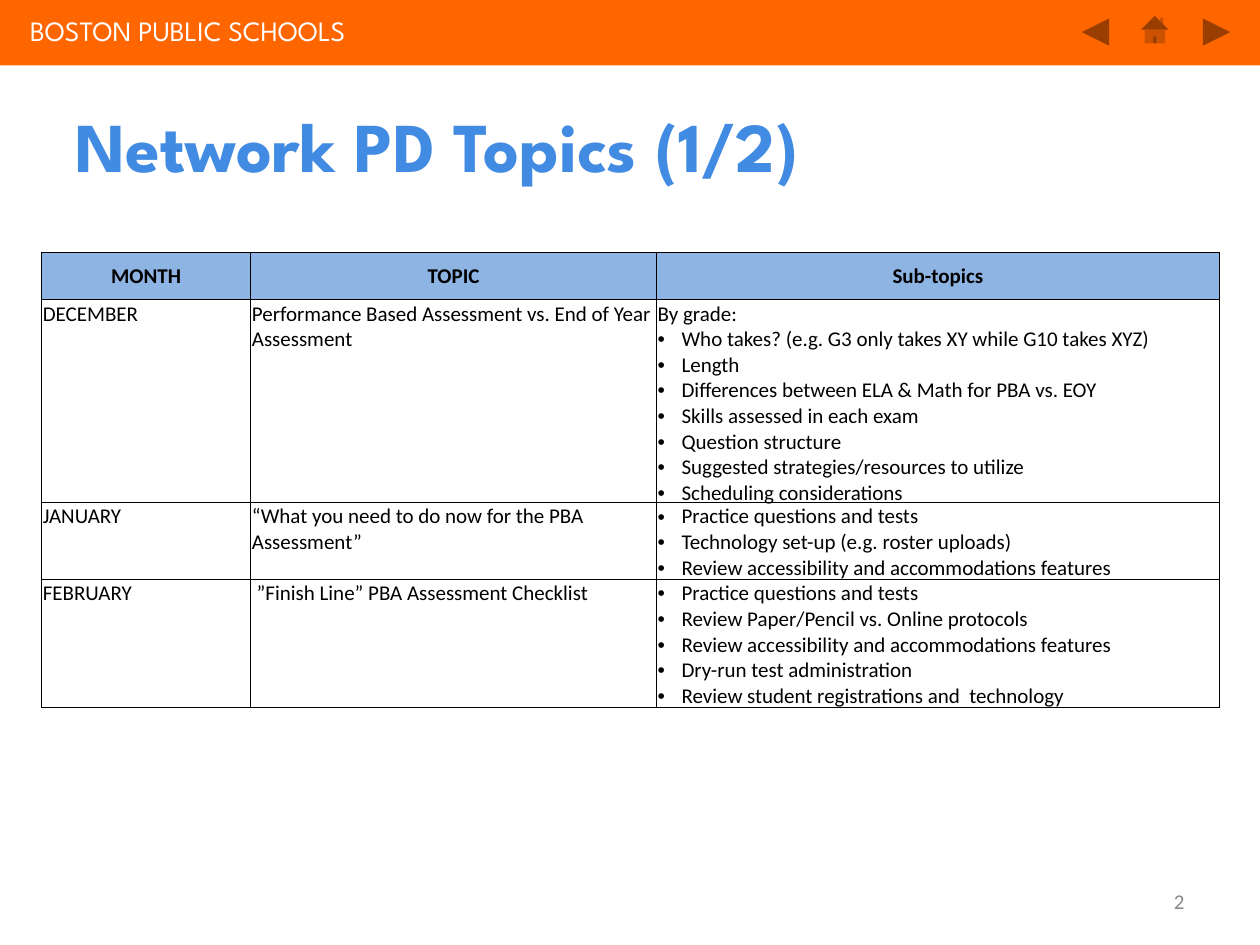
from lxml import etree
from pptx import Presentation
from pptx.dml.color import RGBColor
from pptx.enum.shapes import MSO_SHAPE
from pptx.enum.text import MSO_ANCHOR, PP_ALIGN
from pptx.oxml.ns import qn
from pptx.util import Emu, Inches, Pt

RECT = MSO_SHAPE.RECTANGLE
BACK = MSO_SHAPE.ACTION_BUTTON_BACK_OR_PREVIOUS
HOME = MSO_SHAPE.ACTION_BUTTON_HOME
NEXT = MSO_SHAPE.ACTION_BUTTON_FORWARD_OR_NEXT
LEFT, CENTER, RIGHT = PP_ALIGN.LEFT, PP_ALIGN.CENTER, PP_ALIGN.RIGHT
TOP, MIDDLE = MSO_ANCHOR.TOP, MSO_ANCHOR.MIDDLE

COLORS = {"banner": "FF6600", "white": "FFFFFF", "title": "428BE3",
          "header": "8DB4E2", "text": "000000", "number": "898989"}
HEADING_FONT, BODY_FONT = "League Spartan", "Calibri"
SLIDE_COLS, SLIDE_ROWS = 100, 75
BULLET = "•"
INDENT = Inches(0.19)

TABLE_COLS = (16.6, 32.2, 44.7)
ROW_HEIGHT = 3.8
HEADERS = ("MONTH", "TOPIC", "Sub-topics")
TOPICS = (
    ("DECEMBER",
     "Performance Based Assessment vs. End of Year Assessment",
     ("By grade:",
      "• Who takes? (e.g. G3 only takes XY while G10 takes XYZ)",
      "• Length",
      "• Differences between ELA & Math for PBA vs. EOY",
      "• Skills assessed in each exam",
      "• Question structure",
      "• Suggested strategies/resources to utilize",
      "• Scheduling considerations")),
    ("JANUARY",
     "“What you need to do now for the PBA Assessment”",
     ("• Practice questions and tests",
      "• Technology set-up (e.g. roster uploads)",
      "• Review accessibility and accommodations features")),
    ("FEBRUARY",
     " ”Finish Line” PBA Assessment Checklist",
     ("• Practice questions and tests",
      "• Review Paper/Pencil vs. Online protocols",
      "• Review accessibility and accommodations features",
      "• Dry-run test administration",
      "• Review student registrations and  technology")),
)


def grid(*cells):
    """Turn numbers of grid cells, a tenth of an inch each, into lengths."""
    return [Emu(round(c * Inches(10) / SLIDE_COLS)) for c in cells]


def color(name):
    """Look up a named colour."""
    return RGBColor.from_string(COLORS[name])


def format_paragraph(p, font, size, tone, bold=False, align=LEFT):
    """Set alignment and run formatting of a paragraph."""
    p.alignment = align
    for r in p.runs:
        r.font.name = font
        r.font.size = Pt(size)
        r.font.bold = bold
        r.font.color.rgb = color(tone)


def add_block(s, kind, box):
    """Add a flat banner-coloured preset shape."""
    sp = s.shapes.add_shape(kind, *grid(*box))
    sp.shadow.inherit = False
    sp.fill.solid()
    sp.fill.fore_color.rgb = color("banner")
    sp.line.fill.background()


def add_text(s, text, box, font, size, tone, bold=False, align=LEFT, anchor=MIDDLE):
    """Add a wrapped single-paragraph text box."""
    tf = s.shapes.add_textbox(*grid(*box)).text_frame
    tf.word_wrap = True
    tf.vertical_anchor = anchor
    tf.text = text
    format_paragraph(tf.paragraphs[0], font, size, tone, bold, align)


def add_bullet(p):
    """Give a paragraph a hanging bullet."""
    pPr = p._p.get_or_add_pPr()
    pPr.set("marL", str(INDENT))
    pPr.set("indent", str(-INDENT))
    etree.SubElement(pPr, qn("a:buFont")).set("typeface", "Arial")
    etree.SubElement(pPr, qn("a:buChar")).set("char", BULLET)


def add_borders(cell):
    """Draw thin lines on all four sides of a cell."""
    tcPr = cell._tc.get_or_add_tcPr()
    for side in ("a:lnL", "a:lnR", "a:lnT", "a:lnB"):
        ln = etree.SubElement(tcPr, qn(side), w=str(Pt(0.5)))
        fill = etree.SubElement(ln, qn("a:solidFill"))
        etree.SubElement(fill, qn("a:srgbClr")).set("val", COLORS["text"])


def fill_cell(cell, lines, header=False):
    """Write and style the lines of one table cell."""
    cell.margin_left = cell.margin_right = cell.margin_top = Inches(0.01)
    cell.margin_bottom = 0
    cell.vertical_anchor = MIDDLE if header else TOP
    add_borders(cell)
    if header:
        cell.fill.solid()
        cell.fill.fore_color.rgb = color("header")
    else:
        cell.fill.background()
    tf = cell.text_frame
    tf.text = "\n".join(line.removeprefix(BULLET + " ") for line in lines)
    for p, line in zip(tf.paragraphs, lines):
        format_paragraph(p, BODY_FONT, 12, "text", header, CENTER if header else LEFT)
        if line.startswith(BULLET):
            add_bullet(p)


def add_topics(s, left, top, height):
    """Add the table of months, topics and sub-topics."""
    rows = [[(h,) for h in HEADERS]]
    rows += [[(month,), (topic,), subtopics] for month, topic, subtopics in TOPICS]
    box = grid(left, top, sum(TABLE_COLS), height)
    gf = s.shapes.add_table(len(rows), len(HEADERS), *box)
    table = gf.table
    table.horz_banding = False
    for column, width in zip(table.columns, grid(*TABLE_COLS)):
        column.width = width
    for i, row in enumerate(rows):
        table.rows[i].height = grid(ROW_HEIGHT)[0]
        for j, lines in enumerate(row):
            fill_cell(table.cell(i, j), lines, header=i == 0)
    gf.height = box[3]


def main():
    """Build the slide and save it."""
    prs = Presentation()
    prs.slide_width, prs.slide_height = grid(SLIDE_COLS, SLIDE_ROWS)
    s = prs.slides.add_slide(prs.slide_layouts[6])
    add_block(s, RECT, (0, 0, 100.3, 5.2))
    for kind, left, top in ((NEXT, 95.1, 1.1), (BACK, 85.5, 1.1), (HOME, 90.2, 0.9)):
        add_block(s, kind, (left, top, 2.9, 2.9))
    add_text(s, "BOSTON PUBLIC SCHOOLS", (1.4, 0.6, 83.2, 3.7),
             HEADING_FONT, 16, "white", anchor=TOP)
    add_text(s, "Network PD Topics (1/2)", (5, 7.4, 90, 8.2),
             HEADING_FONT, 40, "title", bold=True)
    add_topics(s, 3.3, 20, 36.2)
    add_text(s, "2", (71.7, 69.5, 23.3, 4), BODY_FONT, 12, "number", align=RIGHT)
    prs.save("out.pptx")


if __name__ == "__main__":
    main()
